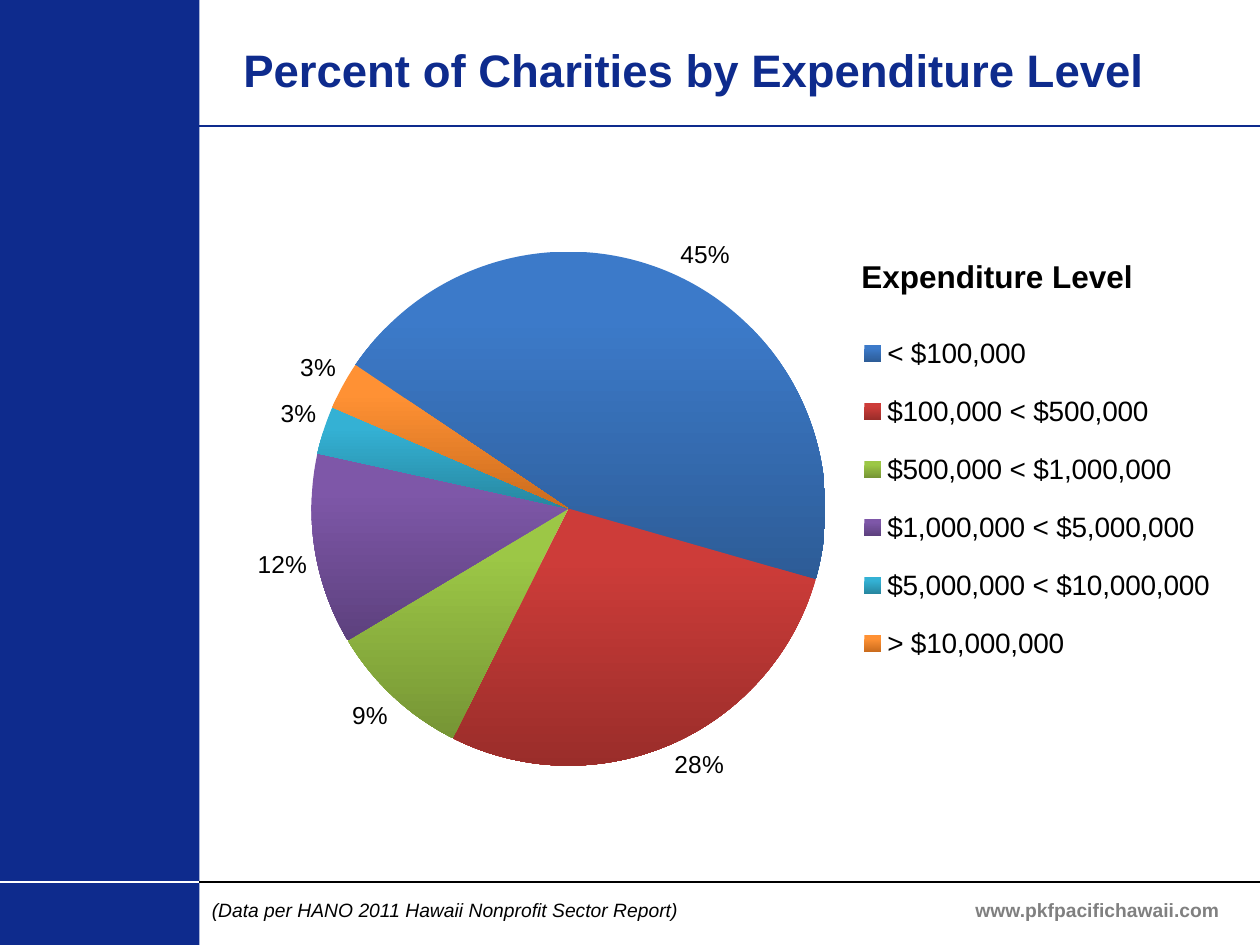
from lxml.etree import SubElement
from pptx import Presentation
from pptx.chart.data import CategoryChartData
from pptx.dml.color import RGBColor
from pptx.enum.chart import XL_CHART_TYPE, XL_LABEL_POSITION, XL_LEGEND_POSITION
from pptx.enum.shapes import MSO_CONNECTOR, MSO_SHAPE
from pptx.enum.text import MSO_ANCHOR, PP_ALIGN
from pptx.oxml import parse_xml
from pptx.oxml.ns import nsdecls, qn
from pptx.util import Cm, Pt

COLORS = {"navy": "0E2B8D", "black": "000000", "white": "FFFFFF", "gray": "808080"}
SLIDE_WIDTH, SLIDE_HEIGHT = 25.4, 19.05
SIDEBAR_WIDTH, HEADER_HEIGHT, FOOTER_TOP = 4.02, 2.54, 17.78
LEVELS = [
    ("< $100,000", 0.45, "3C7AC9", "2D5C97"),
    ("$100,000 < $500,000", 0.28, "CD3C39", "9A2D2A"),
    ("$500,000 < $1,000,000", 0.09, "9CC746", "769535"),
    ("$1,000,000 < $5,000,000", 0.12, "7E57A8", "5D417E"),
    ("$5,000,000 < $10,000,000", 0.03, "34B1D4", "2787A0"),
    ("> $10,000,000", 0.03, "FF9134", "CB6C1D"),
]


def rgb(color):
    """Return the named or hex colour."""
    return RGBColor.from_string(COLORS.get(color, color))


def style_font(font, color="black", **formats):
    """Apply Arial, a colour and the given format values to a font."""
    for attribute, value in {"name": "Arial", **formats}.items():
        setattr(font, attribute, value)
    font.color.rgb = rgb(color)


def add_rule(slide, left, top, width, color):
    """Draw a one-point horizontal rule."""
    rule = slide.shapes.add_connector(
        MSO_CONNECTOR.STRAIGHT, Cm(left), Cm(top), Cm(left + width), Cm(top))
    rule.line.color.rgb = rgb(color)
    rule.line.width = Pt(1)
    SubElement(rule._element.spPr, qn("a:effectLst"))


def add_caption(slide, box, text, align, **formats):
    """Place one line of small text in the box."""
    caption = slide.shapes.add_textbox(*map(Cm, box))
    frame = caption.text_frame
    frame.word_wrap = True
    frame.vertical_anchor = MSO_ANCHOR.MIDDLE
    frame.text = text
    frame.paragraphs[0].alignment = align
    style_font(frame.paragraphs[0].runs[0].font, size=Pt(11), **formats)


def add_sidebar(slide, left, top, width, height):
    """Fill the side band."""
    band = slide.shapes.add_shape(
        MSO_SHAPE.RECTANGLE, *map(Cm, (left, top, width, height)))
    band.shadow.inherit = False
    band.fill.solid()
    band.fill.fore_color.rgb = rgb("navy")
    band.line.fill.background()


def add_header(slide, left, top, width, height):
    """Place the title with the rule below it."""
    add_rule(slide, left, top + height, width, "navy")
    title = slide.shapes.title
    title.left, title.top, title.width, title.height = map(
        Cm, (left + 0.63, top - 0.2, 20.32, 3.18))
    frame = title.text_frame
    frame.text = "Percent of Charities by Expenditure Level"
    frame.vertical_anchor = MSO_ANCHOR.MIDDLE
    frame.paragraphs[0].alignment = PP_ALIGN.LEFT
    style_font(frame.paragraphs[0].runs[0].font, "navy", size=Pt(26), bold=True)


def add_footer(slide, left, top, width):
    """Place the footer rules, web address and data source."""
    add_rule(slide, left, top, width, "black")
    add_rule(slide, left, top, SIDEBAR_WIDTH, "white")
    add_caption(slide, (left + width - 6.55, top + 0.05, 6.55, 1.02),
                "www.pkfpacifichawaii.com", PP_ALIGN.CENTER, color="gray", bold=True)
    add_caption(slide, (left + SIDEBAR_WIDTH, top + 0.2, 14.17, 0.74),
                "(Data per HANO 2011 Hawaii Nonprofit Sector Report)",
                PP_ALIGN.LEFT, italic=True)


def set_layout(element, index, **fractions):
    """Fix a chart part at fractions of the chart area."""
    for layout in element.findall(qn("c:layout")):
        element.remove(layout)
    modes = "".join(f'<c:{axis}Mode val="edge"/>' for axis in "xy")
    sizes = "".join(f'<c:{key} val="{value}"/>' for key, value in fractions.items())
    target = '<c:layoutTarget val="inner"/>' if index == 0 else ""
    element.insert(index, parse_xml(
        f'<c:layout {nsdecls("c")}><c:manualLayout>{target}{modes}{sizes}'
        "</c:manualLayout></c:layout>"))


def add_expenditure_pie(slide, left, top, width, height):
    """Chart the share of charities at each expenditure level."""
    shares = CategoryChartData(number_format="0%")
    shares.categories = [level[0] for level in LEVELS]
    shares.add_series("Expenditure Level", [level[1] for level in LEVELS])
    chart = slide.shapes.add_chart(
        XL_CHART_TYPE.PIE, *map(Cm, (left, top, width, height)), shares).chart
    style_font(chart.font, size=Pt(18))

    chart.has_title = True
    heading = chart.chart_title.text_frame
    heading.text = "Expenditure Level"
    style_font(heading.paragraphs[0].runs[0].font, size=Pt(18), bold=True)
    chart.chart_title.include_in_layout = False
    set_layout(chart.chart_title._element, 1, x=0.63, y=0.17)

    chart.has_legend = True
    chart.legend.position = XL_LEGEND_POSITION.RIGHT
    chart.legend.include_in_layout = False
    style_font(chart.legend.font, size=Pt(16))
    set_layout(chart.legend._element, 1, x=0.63, y=0.26, w=0.36, h=0.56)

    pie = chart.plots[0]
    pie.vary_by_categories = True
    pie.has_data_labels = True
    labels = pie.data_labels
    formats = {"show_value": True, "show_percentage": False, "number_format": "0%",
               "number_format_is_linked": False,
               "position": XL_LABEL_POSITION.OUTSIDE_END}
    for attribute, value in formats.items():
        setattr(labels, attribute, value)
    style_font(labels.font, size=Pt(14))
    for index, (_, _, upper, lower) in enumerate(LEVELS):
        fill = pie.series[0].points[index].format.fill
        fill.gradient()
        fill.gradient_angle = 270
        for stop, color, position in zip(fill.gradient_stops, (upper, lower), (0.2, 1)):
            stop.color.rgb = rgb(color)
            stop.position = position
    for angle in pie._element.findall(qn("c:firstSliceAng")):
        pie._element.remove(angle)
    SubElement(pie._element, qn("c:firstSliceAng"), val="304")
    set_layout(pie._element.getparent(), 0, x=0.09, y=0.17, w=0.51, h=0.77)


def main():
    """Build and save the slide."""
    deck = Presentation()
    deck.slide_width, deck.slide_height = Cm(SLIDE_WIDTH), Cm(SLIDE_HEIGHT)
    slide = deck.slides.add_slide(deck.slide_layouts[5])
    add_sidebar(slide, 0, 0, SIDEBAR_WIDTH, SLIDE_HEIGHT)
    add_header(slide, SIDEBAR_WIDTH, 0, SLIDE_WIDTH - SIDEBAR_WIDTH, HEADER_HEIGHT)
    add_footer(slide, 0, FOOTER_TOP, SLIDE_WIDTH)
    add_expenditure_pie(slide, 4.45, 2.74, 20.32, 13.54)
    deck.save("out.pptx")


if __name__ == "__main__":
    main()
